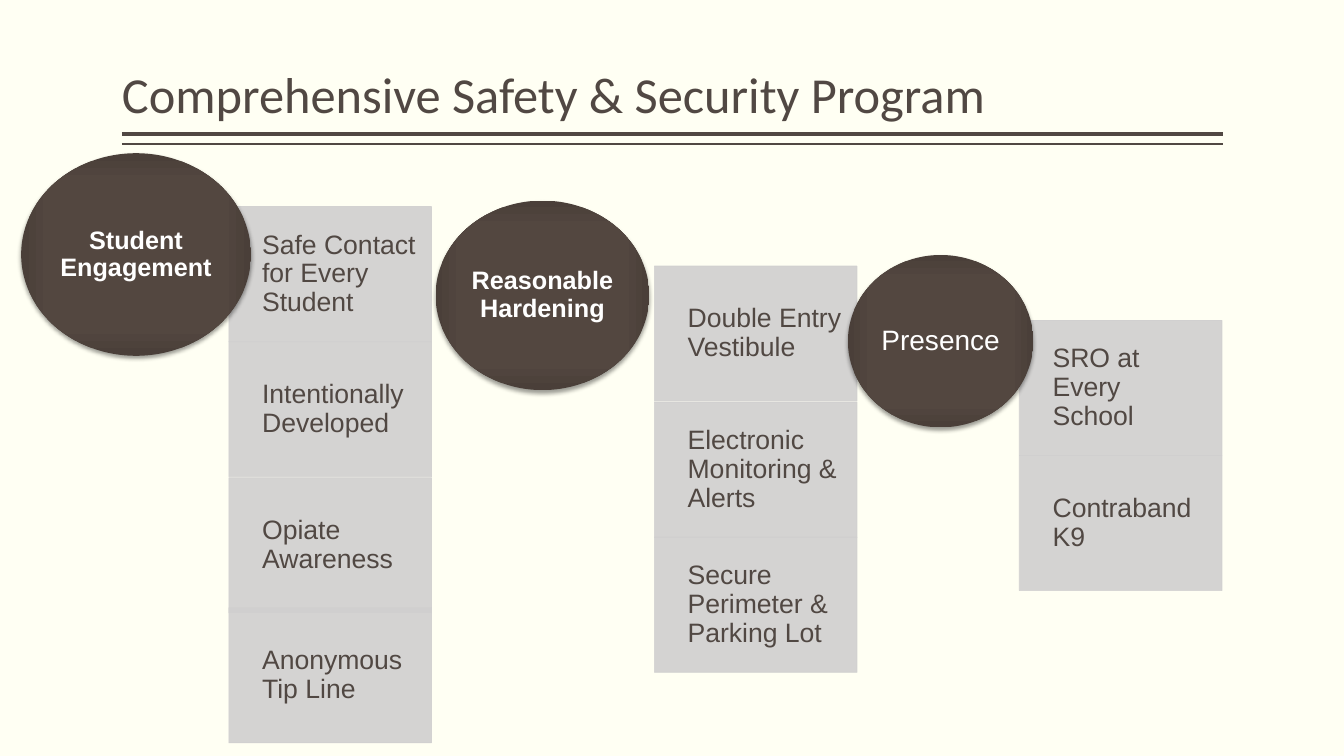
"""Builds the Comprehensive Safety & Security Program slide."""
import pptx
import pptx.dml.color
import pptx.enum.shapes
import pptx.enum.text
import pptx.oxml
import pptx.oxml.ns
import pptx.util
from lxml import etree

Inches = pptx.util.Inches
Pt = pptx.util.Pt
RGBColor = pptx.dml.color.RGBColor
SHAPE = pptx.enum.shapes.MSO_SHAPE
ALIGN = pptx.enum.text.PP_ALIGN
ANCHOR = pptx.enum.text.MSO_ANCHOR
qn = pptx.oxml.ns.qn

CREAM = RGBColor(0xFF, 0xFF, 0xF3)
BROWN = RGBColor(0x51, 0x48, 0x43)
GREY = RGBColor(0xD0, 0xCF, 0xCF)
WHITE = RGBColor(0xFF, 0xFF, 0xFF)
CENTER_BROWN = RGBColor(0x54, 0x47, 0x40)
MIDDLE_BROWN = RGBColor(0x53, 0x47, 0x40)
EDGE_BROWN = RGBColor(0x4A, 0x3F, 0x39)

STOPS = "".join(
    f'<a:gs pos="{position}"><a:srgbClr val="{color}"/></a:gs>'
    for position, color in [(0, CENTER_BROWN), (71000, MIDDLE_BROWN), (100000, EDGE_BROWN)]
)
CIRCLE_FILL = (
    f'<a:gradFill {pptx.oxml.ns.nsdecls("a")} rotWithShape="1"><a:gsLst>{STOPS}</a:gsLst>'
    '<a:path path="rect"><a:fillToRect l="50000" t="50000" r="50000" b="50000"/></a:path>'
    "</a:gradFill>"
)
CIRCLE_SHADOW = (
    f'<a:outerShdw {pptx.oxml.ns.nsdecls("a")} blurRad="39370" dist="25400" dir="5400000"'
    ' rotWithShape="0"><a:srgbClr val="000000"><a:alpha val="38000"/></a:srgbClr></a:outerShdw>'
)

BOX_WIDTH, BOX_HEIGHT = 2.01, 1.34
PILLARS = [
    ("Student Engagement", (0.21, 1.52, 2.28, 2.01), 18, True, 2.27,
     [(2.05, "Safe Contact for Every Student"), (3.39, "Intentionally Developed"),
      (4.74, "Opiate Awareness"), (6.03, "Anonymous Tip Line")]),
    ("Reasonable Hardening", (4.32, 1.99, 2.12, 1.88), 18, True, 6.49,
     [(2.64, "Double Entry Vestibule"), (3.99, "Electronic Monitoring & Alerts"),
      (5.33, "Secure Perimeter & Parking Lot")]),
    ("Presence", (8.41, 2.53, 1.84, 1.71), 20, False, 10.11,
     [(3.18, "SRO at Every School"), (4.52, "Contraband K9")]),
]


def write(shape, text, size, color, font, margins, align=ALIGN.LEFT, anchor=ANCHOR.MIDDLE):
    frame = shape.text_frame
    frame.word_wrap = True
    frame.auto_size = pptx.enum.text.MSO_AUTO_SIZE.NONE
    frame.vertical_anchor = anchor
    frame.margin_left, frame.margin_top, frame.margin_right, frame.margin_bottom = map(Inches, margins)
    frame.text = text
    paragraph = frame.paragraphs[0]
    paragraph.alignment = align
    paragraph.line_spacing = 0.9
    paragraph.font.name = font
    paragraph.font.size = Pt(size)
    paragraph.font.color.rgb = color
    return paragraph


def add_plain_shape(kind, bounds, color):
    shape = slide.shapes.add_shape(kind, *map(Inches, bounds))
    shape.shadow.inherit = False
    shape.fill.solid()
    shape.fill.fore_color.rgb = color
    return shape


deck = pptx.Presentation()
deck.slide_width, deck.slide_height = Inches(13.33), Inches(7.5)
slide = deck.slides.add_slide(deck.slide_layouts[5])
slide.background.fill.solid()
slide.background.fill.fore_color.rgb = CREAM

title = slide.shapes.title
title.left, title.top, title.width, title.height = map(Inches, (1.21, 0.08, 10.92, 1.2))
write(title, "Comprehensive Safety & Security Program", 36, BROWN, "Calibri",
      (0, 0.05, 0, 0.05), anchor=ANCHOR.BOTTOM)

for rule_top, rule_weight in [(1.33, 3), (1.43, 1)]:
    rule = slide.shapes.add_connector(
        pptx.enum.shapes.MSO_CONNECTOR.STRAIGHT,
        Inches(1.21), Inches(rule_top), Inches(12.13), Inches(rule_top))
    rule.line.color.rgb = BROWN
    rule.line.width = Pt(rule_weight)
    etree.SubElement(rule._element.spPr, qn("a:effectLst"))

for pillar, circle_bounds, pillar_size, pillar_bold, box_left, measures in PILLARS:
    for box_top, measure in measures:
        box = add_plain_shape(SHAPE.RECTANGLE, (box_left, box_top, BOX_WIDTH, BOX_HEIGHT), GREY)
        box.line.color.rgb = GREY
        box.line.width = Pt(0.5)
        for tint in box._element.spPr.iter(qn("a:srgbClr")):
            etree.SubElement(tint, qn("a:alpha"), val="90000")
        write(box, measure, 19, BROWN, "Arial", (0.33, 0.15, 0.15, 0.15))

    circle = add_plain_shape(SHAPE.OVAL, circle_bounds, CENTER_BROWN)
    circle.line.fill.background()
    circle_properties = circle._element.spPr
    circle_properties.replace(circle_properties.find(qn("a:solidFill")),
                              pptx.oxml.parse_xml(CIRCLE_FILL))
    circle_properties.find(qn("a:effectLst")).append(pptx.oxml.parse_xml(CIRCLE_SHADOW))
    label = write(circle, pillar, pillar_size, WHITE, "Arial", (0, 0, 0, 0), ALIGN.CENTER)
    label.font.bold = pillar_bold

deck.save("out.pptx")
